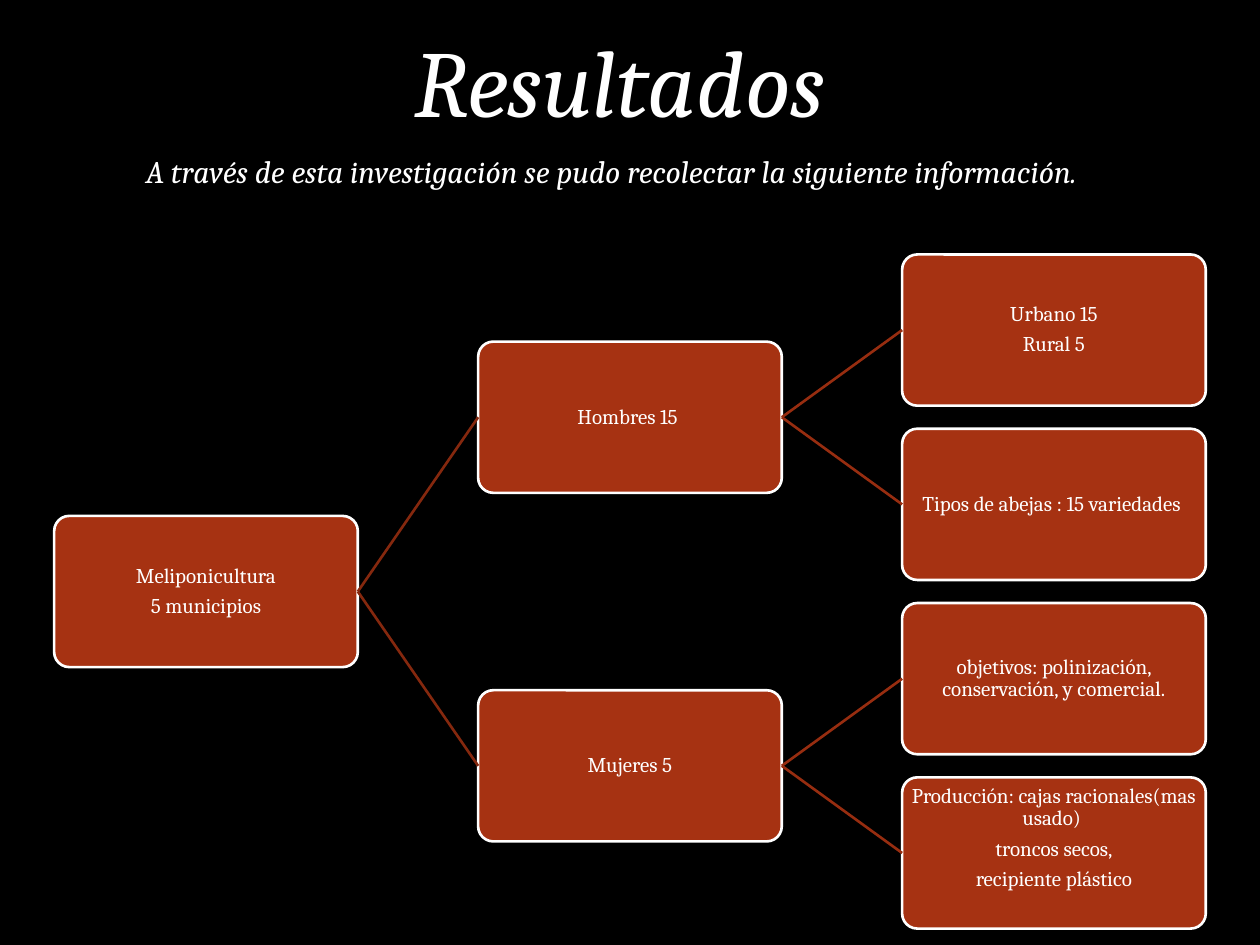
from dataclasses import dataclass

from lxml import etree
from pptx import Presentation
from pptx.dml.color import RGBColor
from pptx.enum.shapes import MSO_CONNECTOR, MSO_SHAPE
from pptx.enum.text import MSO_ANCHOR, MSO_AUTO_SIZE, PP_ALIGN
from pptx.oxml.ns import qn
from pptx.util import Inches, Pt

STRAIGHT = MSO_CONNECTOR.STRAIGHT
ROUNDED = MSO_SHAPE.ROUNDED_RECTANGLE
TOP, MIDDLE = MSO_ANCHOR.TOP, MSO_ANCHOR.MIDDLE
LEFT, CENTER = PP_ALIGN.LEFT, PP_ALIGN.CENTER
NO_AUTOFIT = MSO_AUTO_SIZE.NONE
LEFT_SIDE, RIGHT_SIDE = 1, 3


@dataclass(frozen=True)
class Theme:
    """Colours, font and type sizes of the slide."""
    background: RGBColor = RGBColor(0x00, 0x00, 0x00)
    text: RGBColor = RGBColor(0xFF, 0xFF, 0xFF)
    node: RGBColor = RGBColor(0xA6, 0x32, 0x12)
    links: tuple = (RGBColor(0x85, 0x28, 0x0E), RGBColor(0x97, 0x2D, 0x10))
    font: str = "Cambria"
    title_size: int = 54
    subtitle_size: int = 18
    node_size: int = 12
    line_width: float = 1.5


@dataclass(frozen=True)
class Box:
    """A region of the slide in inches."""
    left: float
    top: float
    width: float
    height: float

    def lengths(self):
        """Return the four measures as slide lengths."""
        return [Inches(v) for v in (self.left, self.top, self.width, self.height)]


@dataclass(frozen=True)
class Node:
    """A tree entry with its lines of text, children and raised text."""
    lines: tuple
    children: tuple = ()
    lift: float = 0


THEME = Theme()
NODE_WIDTH, NODE_HEIGHT = 2.41, 1.2
LEVELS, LEAVES = 3, 4
TREE = Node(("Meliponicultura", "5 municipios"), (
    Node(("Hombres 15 ",), (
        Node(("Urbano 15", "Rural 5")),
        Node(("Tipos de abejas : 15 variedades ",)),
    )),
    Node(("Mujeres 5",), (
        Node(("objetivos: polinización, conservación, y comercial.",)),
        Node(("Producción: cajas racionales(mas usado) ", "troncos secos,",
              "recipiente plástico"), lift=0.24),
    )),
))


def style_paragraph(paragraph, size, alignment, italic=False):
    """Apply the theme's type to every run of a paragraph."""
    paragraph.alignment = alignment
    for run in paragraph.runs:
        run.font.name = THEME.font
        run.font.size = Pt(size)
        run.font.italic = italic
        run.font.color.rgb = THEME.text


def write_heading(shape, box, text, size):
    """Place an italic single-line heading in its box."""
    shape.left, shape.top, shape.width, shape.height = box.lengths()
    frame = shape.text_frame
    frame.text = text
    frame.word_wrap = False
    frame.auto_size = NO_AUTOFIT
    frame.vertical_anchor = TOP
    style_paragraph(frame.paragraphs[0], size, LEFT, italic=True)


def add_header(slide, box):
    """Place the title and the sentence below it."""
    title_box = Box(box.left + 2.13, box.top, 3.6, 1.01)
    write_heading(slide.shapes.title, title_box, "Resultados", THEME.title_size)
    subtitle_box = Box(box.left, box.top + 1.03, box.width, 0.4)
    subtitle = slide.shapes.add_textbox(*subtitle_box.lengths())
    write_heading(
        subtitle, subtitle_box,
        "A través de esta investigación se pudo recolectar la siguiente información.",
        THEME.subtitle_size)


def add_node(slide, box, node):
    """Draw one rounded rectangle with its text."""
    shape = slide.shapes.add_shape(ROUNDED, *box.lengths())
    shape.adjustments[0] = 0.1
    shape.shadow.inherit = False
    shape.fill.solid()
    shape.fill.fore_color.rgb = THEME.node
    shape.line.color.rgb = THEME.text
    shape.line.width = Pt(THEME.line_width)
    frame = shape.text_frame
    frame.text = "\n".join(node.lines)
    frame.word_wrap = True
    frame.vertical_anchor = MIDDLE
    frame.margin_left = frame.margin_right = frame.margin_top = Inches(0.01)
    frame.margin_bottom = Inches(0.01 + node.lift)
    for paragraph in frame.paragraphs:
        paragraph.line_spacing = 0.9
        paragraph.space_after = Pt(4.2)
        style_paragraph(paragraph, THEME.node_size, CENTER)
    return shape


def link_nodes(slide, parent, child, color):
    """Join the right side of a parent to the left side of a child."""
    connector = slide.shapes.add_connector(STRAIGHT, 0, 0, 0, 0)
    connector.begin_connect(parent, RIGHT_SIDE)
    connector.end_connect(child, LEFT_SIDE)
    connector.line.color.rgb = color
    connector.line.width = Pt(THEME.line_width)
    etree.SubElement(connector.element.spPr, qn("a:effectLst"))


def count_leaves(node):
    """Count the end nodes below a node."""
    return sum(map(count_leaves, node.children)) or 1


def add_tree(slide, box, node, level=0, first_row=0):
    """Draw a node centred on its leaves, then its branches."""
    column_step = (box.width - NODE_WIDTH) / (LEVELS - 1)
    row_step = (box.height - NODE_HEIGHT) / (LEAVES - 1)
    middle_row = first_row + (count_leaves(node) - 1) / 2
    node_box = Box(box.left + level * column_step, box.top + middle_row * row_step,
                   NODE_WIDTH, NODE_HEIGHT)
    shape = add_node(slide, node_box, node)
    row = first_row
    for child in node.children:
        child_shape = add_tree(slide, box, child, level + 1, row)
        link_nodes(slide, shape, child_shape, THEME.links[level])
        row += count_leaves(child)
    return shape


def main():
    """Build and save the presentation."""
    presentation = Presentation()
    presentation.slide_width, presentation.slide_height = Inches(10), Inches(7.5)
    slide = presentation.slides.add_slide(
        presentation.slide_layouts.get_by_name("Title Only"))
    slide.background.fill.solid()
    slide.background.fill.fore_color.rgb = THEME.background
    add_header(slide, Box(1.06, 0.13, 7.86, 1.43))
    add_tree(slide, Box(0.43, 2.02, 9.14, 5.35), TREE)
    presentation.save("out.pptx")


if __name__ == "__main__":
    main()
